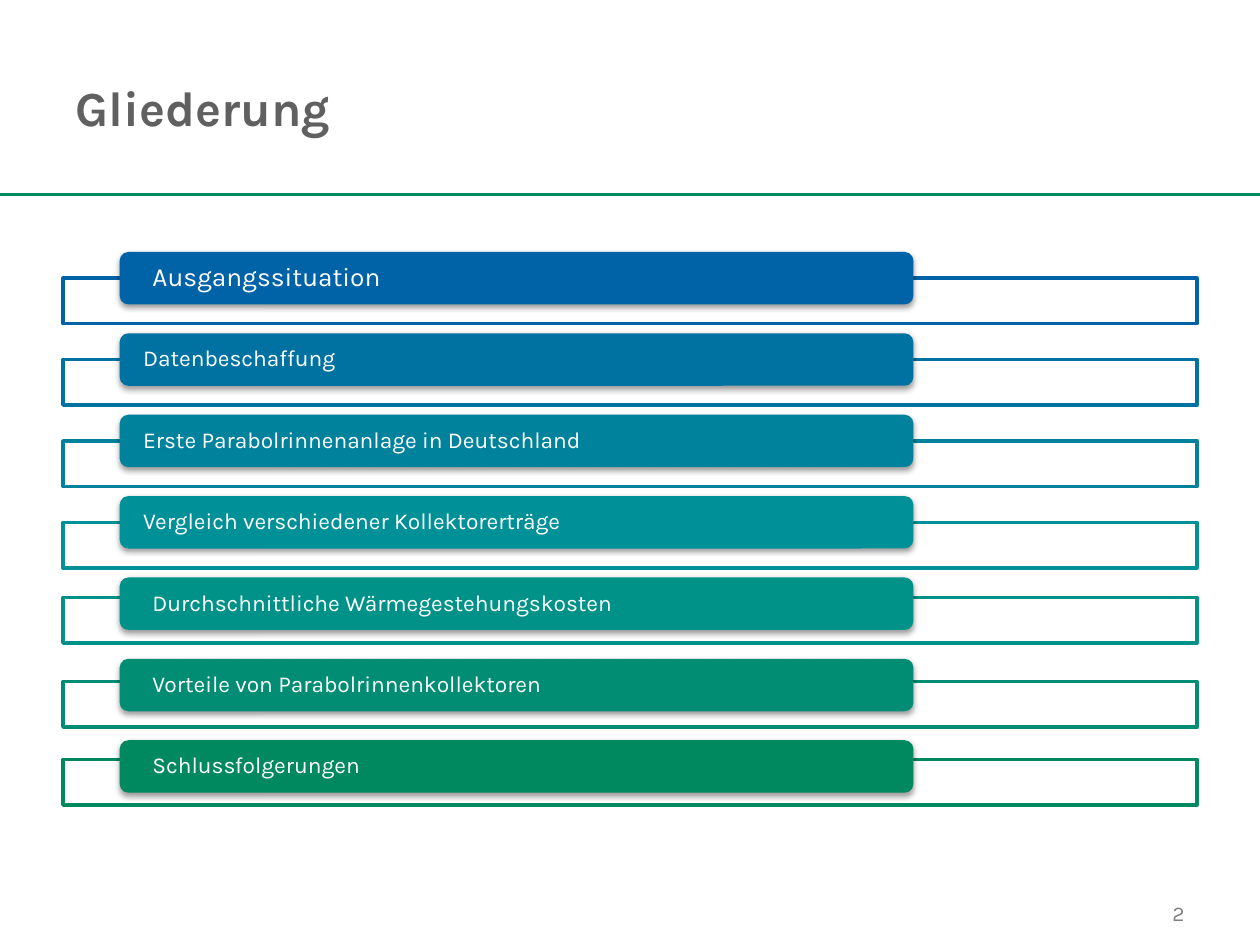
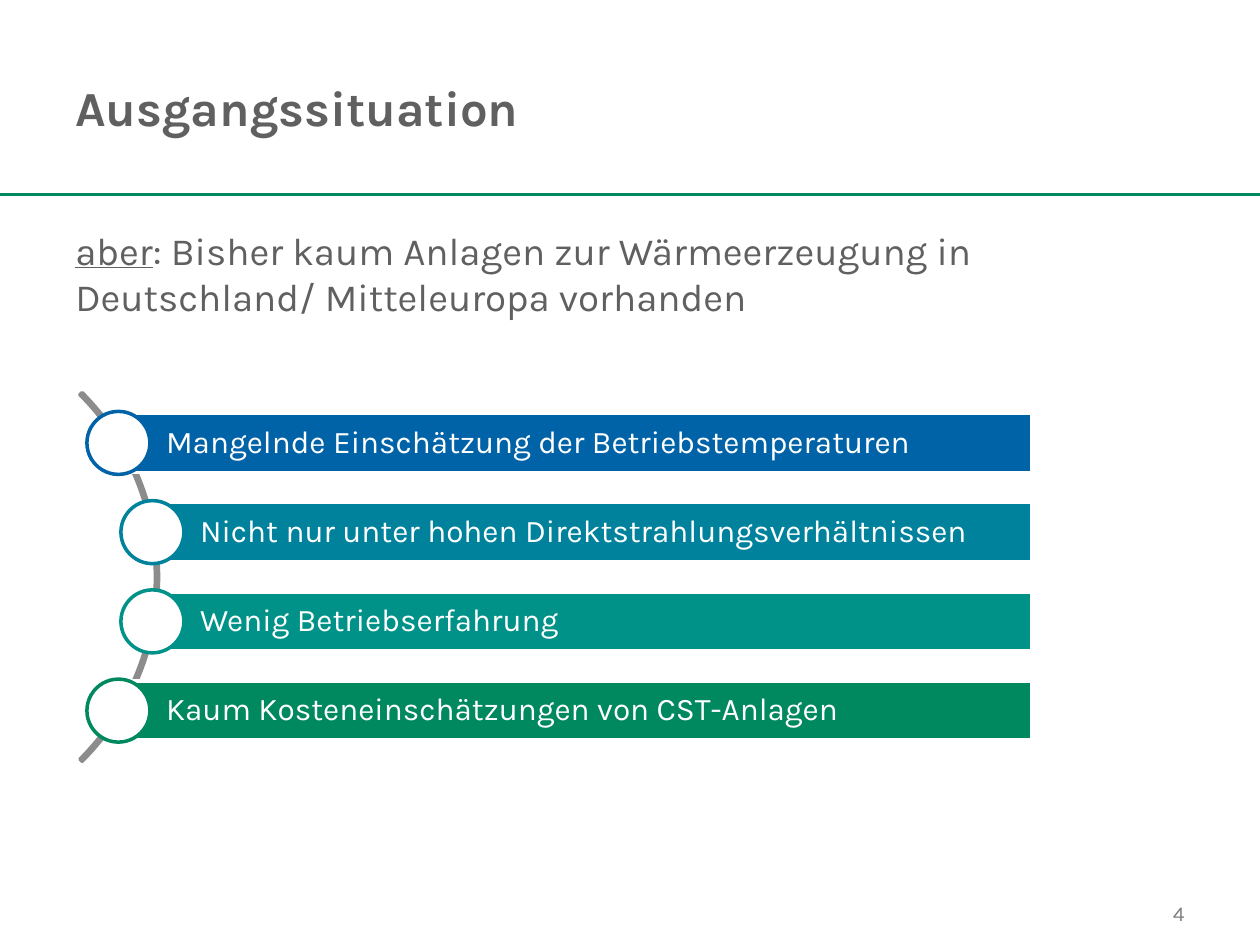
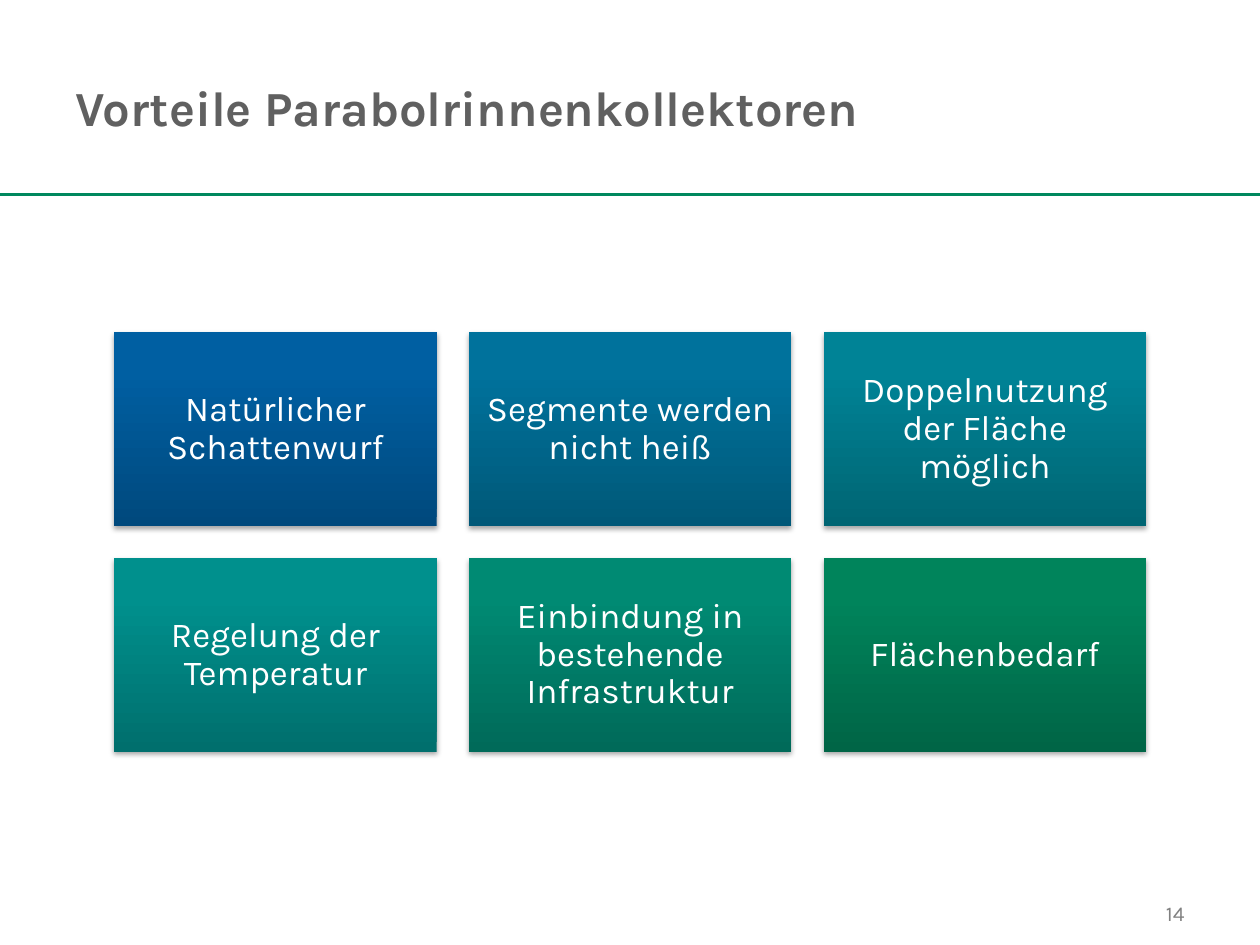
from lxml import etree
from pptx import Presentation
from pptx.dml.color import RGBColor
from pptx.enum.shapes import MSO_CONNECTOR, MSO_SHAPE
from pptx.enum.text import MSO_ANCHOR, PP_ALIGN
from pptx.oxml.ns import qn
from pptx.util import Pt

RECT, PILL = MSO_SHAPE.RECTANGLE, MSO_SHAPE.ROUNDED_RECTANGLE
CIRCLE, ARC = MSO_SHAPE.OVAL, MSO_SHAPE.BLOCK_ARC
LEFT, CENTER, RIGHT = PP_ALIGN.LEFT, PP_ALIGN.CENTER, PP_ALIGN.RIGHT
TOP, MIDDLE = MSO_ANCHOR.TOP, MSO_ANCHOR.MIDDLE

rgb = RGBColor.from_string
FONT = "Karla"
WHITE, GRAY, PALE_GRAY, ARC_GRAY = "FFFFFF", "606060", "808080", "8C8C8C"
BLUE, OCEAN, PETROL, CYAN = "0062A7", "0072A2", "00829D", "009098"
TEAL, JADE, GREEN = "009288", "008D73", "00885E"


def write(sp, runs, size, color, align=LEFT, anchor=MIDDLE, insets=(7.2, 3.6, 7.2, 3.6), spacing=1.0):
    """Fill a shape with one paragraph; runs are (text, font attributes) pairs."""
    tf = sp.text_frame
    tf.word_wrap = True
    tf.vertical_anchor = anchor
    for side, inset in zip(("left", "top", "right", "bottom"), insets):
        setattr(tf, f"margin_{side}", Pt(inset))
    p = tf.paragraphs[0]
    p.alignment, p.line_spacing = align, spacing
    for text, extra in runs:
        r = p.add_run()
        r.text = text
        r.font.color.rgb = rgb(color)
        for name, value in {"name": FONT, "size": Pt(size), **extra}.items():
            setattr(r.font, name, value)


def add_box(s, kind, x, y, w, h, fill=None, line=None, shadow=None):
    """Add a preset shape; shadow is the opacity of a soft drop shadow in percent."""
    sp = s.shapes.add_shape(kind, Pt(x), Pt(y), Pt(w), Pt(h))
    if fill:
        sp.fill.solid()
        sp.fill.fore_color.rgb = rgb(fill)
    else:
        sp.fill.background()
    if line:
        sp.line.color.rgb = rgb(line)
        sp.line.width = Pt(2)
    else:
        sp.line.fill.background()
    sp.shadow.inherit = False
    if shadow:
        effects = sp._element.spPr.find(qn("a:effectLst"))
        outer = etree.SubElement(effects, qn("a:outerShdw"), blurRad=str(Pt(3.1)),
                                 dist=str(Pt(1.7)), dir="5400000", rotWithShape="0")
        black = etree.SubElement(outer, qn("a:srgbClr"), val="000000")
        etree.SubElement(black, qn("a:alpha"), val=str(shadow * 1000))
    return sp


prs = Presentation()
prs.slide_width, prs.slide_height = Pt(720), Pt(540)

# Title, rule and page number on every slide
slides = []
for title, number in (("Gliederung", "2"), ("Ausgangssituation", "4"),
                      ("Vorteile Parabolrinnenkollektoren", "14")):
    s = prs.slides.add_slide(prs.slide_layouts[6])
    rule = s.shapes.add_connector(MSO_CONNECTOR.STRAIGHT, 0, Pt(111.3), prs.slide_width, Pt(111.3))
    rule.line.color.rgb = rgb(GREEN)
    rule.line.width = Pt(1.5)
    etree.SubElement(rule._element.spPr, qn("a:effectLst"))
    sp = s.shapes.add_textbox(Pt(36), Pt(21.6), Pt(545), Pt(78.5))
    write(sp, [(title, {"bold": True})], 28, GRAY)
    sp = s.shapes.add_textbox(Pt(516), Pt(507.6), Pt(168), Pt(28.8))
    write(sp, [(number, {})], 12, PALE_GRAY, RIGHT)
    slides.append(s)
outline, situation, benefits = slides

# Outline: a coloured pill over a frame for each chapter
chapters = [  # text, colour, size, text inset, frame offset
    ("Ausgangssituation", BLUE, 15, 17.3, 15),
    ("Datenbeschaffung", OCEAN, 13, 12, 15),
    ("Erste Parabolrinnenanlage in Deutschland", PETROL, 13, 12, 15),
    ("Vergleich verschiedener Kollektorerträge", CYAN, 13, 12, 15),
    ("Durchschnittliche Wärmegestehungskosten", TEAL, 13, 17.3, 11.5),
    ("Vorteile von Parabolrinnenkollektoren", JADE, 13, 17.3, 13),
    ("Schlussfolgerungen", GREEN, 13, 17.3, 11),
]
for i, (text, color, size, inset, offset) in enumerate(chapters):
    y = 144 + 46.5 * i
    add_box(outline, RECT, 36, y + offset, 648, 26, WHITE, color)
    pill = add_box(outline, PILL, 68.4, y, 453.6, 30, color, shadow=38)
    write(pill, [(text, {})], size, WHITE, insets=(inset, 0, inset, 0), spacing=0.9)

# Starting situation: bars strung along an arc
sp = situation.shapes.add_textbox(Pt(36), Pt(126), Pt(648), Pt(356.4))
write(sp, [("aber", {"underline": True}),
           (": Bisher kaum Anlagen zur Wärmeerzeugung in Deutschland/ Mitteleuropa vorhanden", {})],
      22, GRAY, anchor=TOP)
arc = add_box(situation, ARC, -207.4, 180.7, 298, 298, line=ARC_GRAY)
for i, value in enumerate((189, 27, 0.006)):
    arc.adjustments[i] = value
obstacles = [
    ("Mangelnde Einschätzung der Betriebstemperaturen", BLUE, 67.7),
    ("Nicht nur unter hohen Direktstrahlungsverhältnissen", PETROL, 87.1),
    ("Wenig Betriebserfahrung", TEAL, 87.1),
    ("Kaum Kosteneinschätzungen von CST-Anlagen", GREEN, 67.7),
]
BAR_RIGHT, KNOB = 589.7, 36
for i, (text, color, x) in enumerate(obstacles):
    y = 236.2 + 51 * i
    bar = add_box(situation, RECT, x, y, BAR_RIGHT - x, 33.8, color, WHITE)
    write(bar, [(text, {})], 18, WHITE, insets=(27.2, 3.6, 3.6, 3.6), spacing=0.9)
    add_box(situation, CIRCLE, x - KNOB / 2, y - 1.1, KNOB, KNOB, WHITE, color)

# Benefits: three by two cards, darker towards the bottom
cards = [
    ("Natürlicher Schattenwurf", "00497D", "005FA2"),
    ("Segmente werden nicht heiß", "005878", "00729C"),
    ("Doppelnutzung der Fläche möglich", "006573", "008396"),
    ("Regelung der Temperatur", "006F6D", "00908D"),
    ("Einbindung in bestehende Infrastruktur", "006A59", "008A73"),
    ("Flächenbedarf", "006546", "00845B"),
]
for i, (text, dark, light) in enumerate(cards):
    row, col = divmod(i, 3)
    card = add_box(benefits, RECT, 65.3 + 202.7 * col, 189.9 + 129 * row, 184.3, 110.6, shadow=35)
    card.fill.gradient()
    card.fill.gradient_angle = 90
    for stop, color, position in zip(card.fill.gradient_stops, (dark, light), (0, 0.8)):
        stop.color.rgb = rgb(color)
        stop.position = position
    write(card, [(text, {})], 20, WHITE, CENTER, insets=(6, 6, 6, 6), spacing=0.9)

prs.save("out.pptx")
